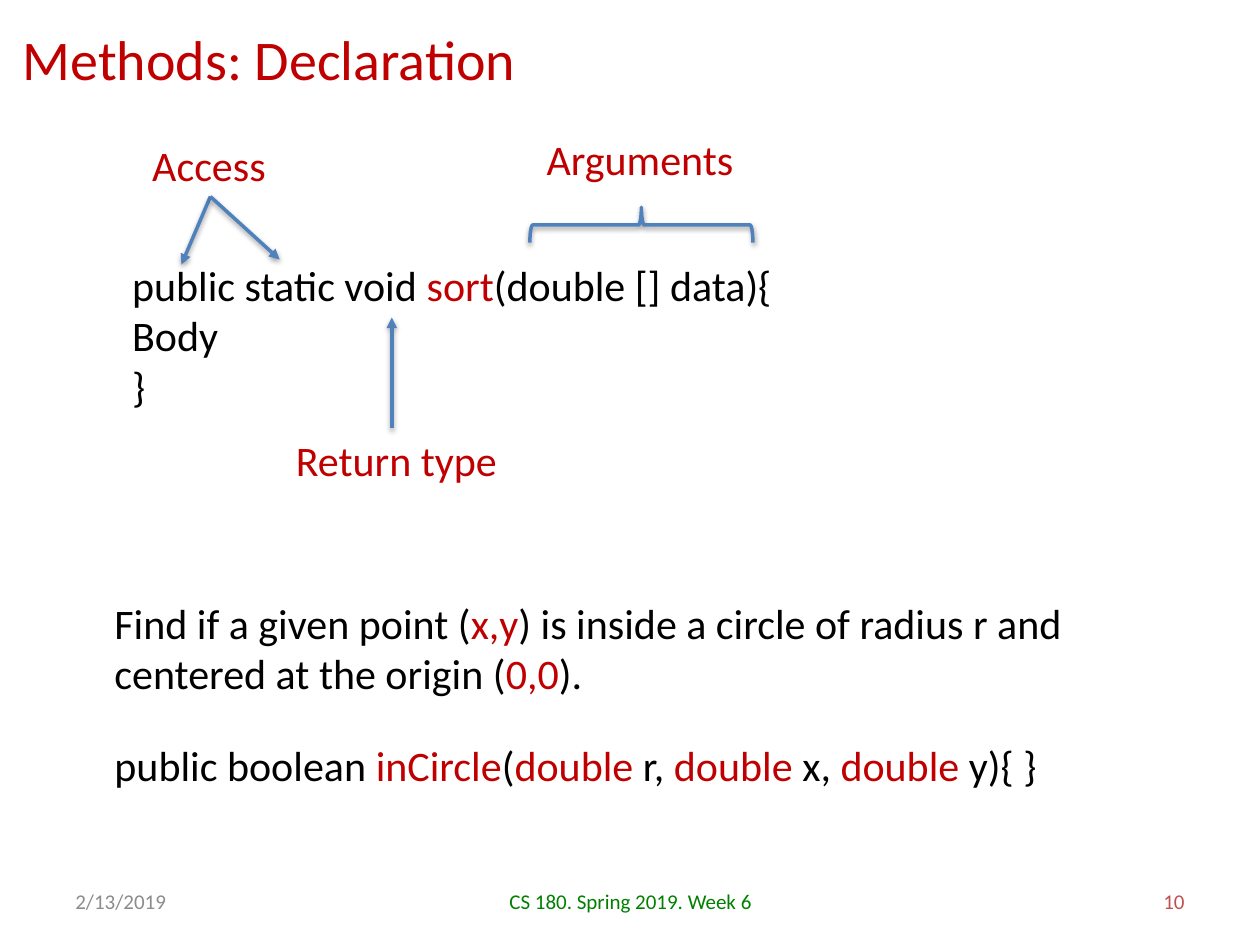
from lxml.etree import SubElement
from pptx import Presentation
from pptx.dml.color import RGBColor
from pptx.enum.shapes import MSO_CONNECTOR, MSO_SHAPE
from pptx.enum.text import MSO_ANCHOR, MSO_AUTO_SIZE, PP_ALIGN
from pptx.oxml.ns import qn
from pptx.util import Pt

PX = 9144  # EMU in one px, 100 px to the inch
BLACK, RED, BLUE = "000000", "C00000", "4F81BD"


def px(*lengths):
    return [length * PX for length in lengths]


def rgb(value):
    return RGBColor.from_string(value)


def style_font(run, size, color):
    run.font.name = "Calibri"
    run.font.size = Pt(size)
    run.font.color.rgb = rgb(color)


def add_text(slide, box, lines, colors=(BLACK, RED), size=24, wrap=True,
             align=PP_ALIGN.LEFT, anchor=MSO_ANCHOR.TOP):
    """Add lines of text; each | in a line switches between the two colours."""
    frame = slide.shapes.add_textbox(*px(*box)).text_frame
    frame.word_wrap = wrap
    frame.auto_size = MSO_AUTO_SIZE.NONE
    frame.vertical_anchor = anchor
    for i, line in enumerate(lines):
        paragraph = frame.paragraphs[0] if i == 0 else frame.add_paragraph()
        paragraph.alignment = align
        for j, part in enumerate(line.split("|")):
            run = paragraph.add_run()
            run.text = part
            style_font(run, size, colors[j % 2])


def add_label(slide, box, text):
    add_text(slide, box, [text], colors=(RED,), wrap=False)


def style_outline(shape):
    """Give a blue line and a soft shadow below it."""
    shape.line.color.rgb = rgb(BLUE)
    shape.line.width = Pt(2)
    properties = shape._element.spPr
    effects = properties.find(qn("a:effectLst"))
    if effects is None:
        effects = SubElement(properties, qn("a:effectLst"))
    shadow = SubElement(effects, qn("a:outerShdw"), blurRad="40000",
                        dist="20000", dir="5400000", rotWithShape="0")
    color = SubElement(shadow, qn("a:srgbClr"), val=BLACK)
    SubElement(color, qn("a:alpha"), val="38000")


def add_arrow(slide, start, end):
    arrow = slide.shapes.add_connector(MSO_CONNECTOR.STRAIGHT, *px(*start, *end))
    style_outline(arrow)
    SubElement(arrow.line._get_or_add_ln(), qn("a:tailEnd"), type="triangle")


def add_title(slide, box, text):
    title = slide.shapes.title
    title.left, title.top, title.width, title.height = px(*box)
    frame = title.text_frame
    frame.text = text
    frame.vertical_anchor = MSO_ANCHOR.MIDDLE
    frame.paragraphs[0].alignment = PP_ALIGN.LEFT
    style_font(frame.paragraphs[0].runs[0], 32, RED)


def add_access(slide, left, top):
    add_label(slide, (left, top, 111, 50), "Access")
    for dx, dy in ((33, 104), (111, 100)):
        add_arrow(slide, (left + 56, top + 50), (left + dx, top + dy))


def add_return_type(slide, left, top):
    add_label(slide, (left, top, 181, 50), "Return type")
    add_arrow(slide, (left + 86, top), (left + 86, top - 88))


def add_arguments(slide, left, top):
    add_label(slide, (left, top, 170, 50), "Arguments")
    brace = slide.shapes.add_shape(
        MSO_SHAPE.LEFT_BRACE, *px(left + 71, top - 11, 28, 177))
    brace.rotation = 90
    brace.fill.background()
    brace.shadow.inherit = False
    style_outline(brace)


def add_declaration(slide, left, top):
    add_text(slide, (left, top, 670, 131),
             ["public static void |sort|(double [] data){", "Body", "}"])
    add_access(slide, left + 16, top - 95)
    add_return_type(slide, left + 130, top + 139)
    add_arguments(slide, left + 329, top - 100)


def add_exercise(slide, left, top):
    add_text(slide, (left, top, 885, 91),
             ["Find if a given point (|x,y|) is inside a circle of radius r "
              "and centered at the origin (|0,0|)."])
    add_text(slide, (left, top + 113, 842, 50),
             ["public boolean |inCircle|(|double| r, |double| x, |double| y){ }"])


def add_footer(slide, left, top):
    parts = (
        (0, 233, "2/13/2019", "8C8C8C", PP_ALIGN.LEFT),
        (292, 317, "CS 180. Spring 2019. Week 6", "008000", PP_ALIGN.CENTER),
        (667, 233, "10", "C0504D", PP_ALIGN.RIGHT),
    )
    for dx, width, text, color, align in parts:
        add_text(slide, (left + dx, top, width, 40), [text], colors=(color,),
                 size=12, align=align, anchor=MSO_ANCHOR.MIDDLE)


def main():
    deck = Presentation()
    deck.slide_width, deck.slide_height = px(1000, 750)
    slide = deck.slides.add_slide(deck.slide_layouts.get_by_name("Title Only"))
    add_title(slide, (8, 6, 686, 81), "Methods: Declaration")
    add_declaration(slide, 95, 201)
    add_exercise(slide, 81, 469)
    add_footer(slide, 50, 695)
    deck.save("out.pptx")


if __name__ == "__main__":
    main()
